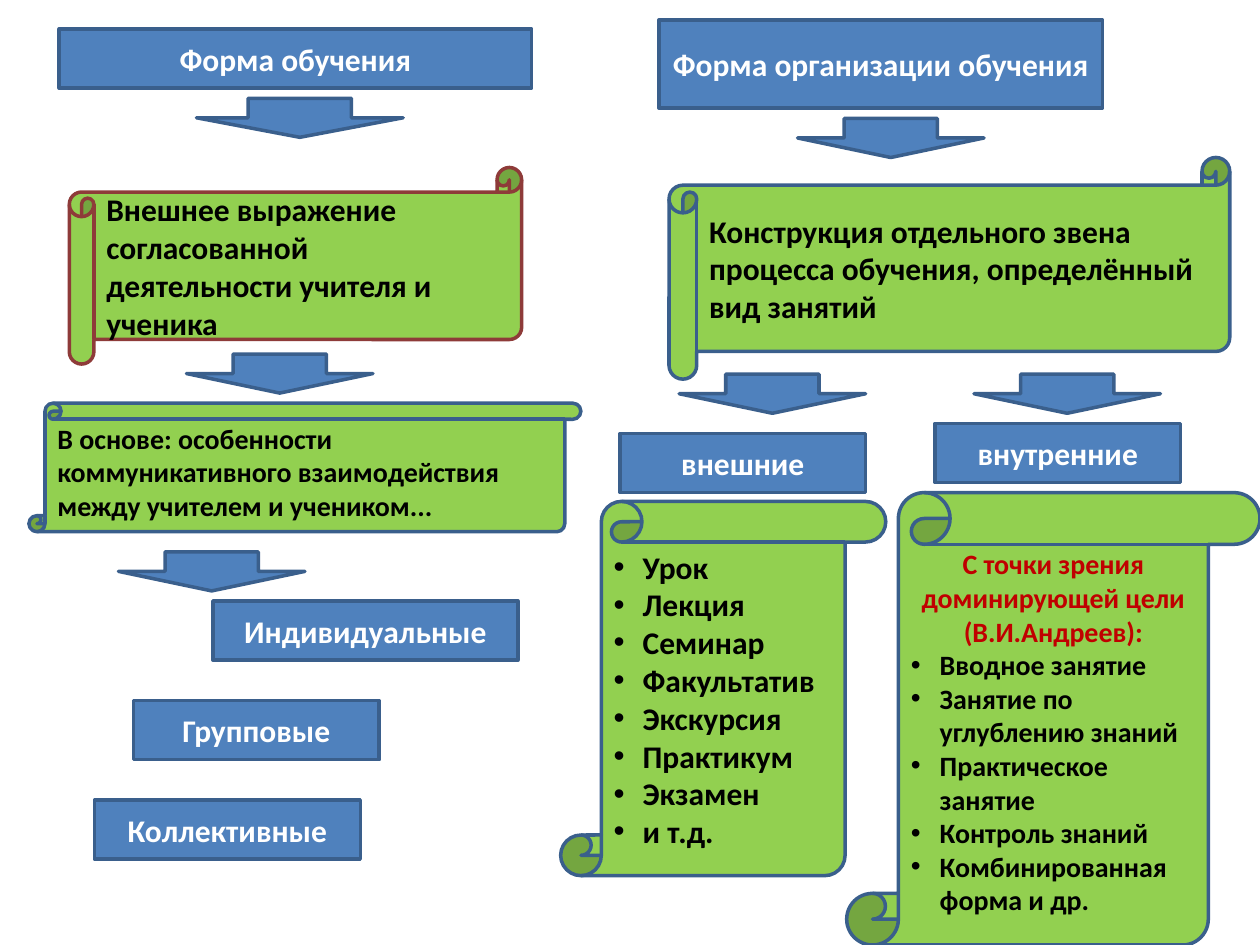
"""Build a slide comparing forms of teaching with forms of organising teaching."""
from dataclasses import dataclass

from lxml import etree
from pptx import Presentation
from pptx.dml.color import RGBColor
from pptx.enum.shapes import MSO_SHAPE
from pptx.enum.text import MSO_ANCHOR, PP_ALIGN
from pptx.oxml.ns import qn
from pptx.util import Inches, Pt

RECTANGLE = MSO_SHAPE.RECTANGLE
DOWN_ARROW = MSO_SHAPE.DOWN_ARROW
WIDE_SCROLL = MSO_SHAPE.HORIZONTAL_SCROLL
TALL_SCROLL = MSO_SHAPE.VERTICAL_SCROLL
LEFT, CENTER = PP_ALIGN.LEFT, PP_ALIGN.CENTER
MIDDLE = MSO_ANCHOR.MIDDLE


@dataclass(frozen=True)
class Theme:
    font: str = "Calibri"
    bullet_font: str = "Arial"
    blue: str = "4F81BD"
    green: str = "92D050"
    outline: str = "3A5F8C"
    red_outline: str = "8E3B39"
    label_text: str = "FFFFFF"
    scroll_text: str = "000000"
    accent_text: str = "C00000"
    large: int = 18
    small: int = 16
    line_width: int = 2
    bullet_indent: float = 0.23


THEME = Theme()


@dataclass(frozen=True)
class Label:
    text: str
    left: float
    top: float
    width: float = 1.95
    height: float = 0.47


@dataclass(frozen=True)
class Arrow:
    left: float
    top: float
    width: float = 1.48
    height: float = 0.31


@dataclass(frozen=True)
class Scroll:
    preset: MSO_SHAPE
    left: float
    top: float
    width: float
    height: float
    text: str = ""
    bullets: tuple[str, ...] = ()
    size: int = THEME.large
    outline: str = THEME.outline


LABELS = (
    Label("Форма обучения", 0.47, 0.23, 3.75),
    Label("Форма организации обучения", 5.23, 0.16, 3.52, 0.7),
    Label("внешние", 4.92, 3.44),
    Label("внутренние", 7.42, 3.36),
    Label("Индивидуальные", 1.69, 4.77, 2.42),
    Label("Групповые", 1.06, 5.56),
    Label("Коллективные", 0.75, 6.35, 2.11),
)

ARROWS = (
    Arrow(1.56, 0.78, 1.64),
    Arrow(6.33, 0.94),
    Arrow(7.73, 2.97),
    Arrow(5.39, 2.97),
    Arrow(1.48, 2.81),
    Arrow(0.94, 4.38),
)

SCROLLS = (
    Scroll(WIDE_SCROLL, 0.55, 1.33, 3.59, 1.56,
           "Внешнее выражение согласованной деятельности учителя и ученика",
           outline=THEME.red_outline),
    Scroll(WIDE_SCROLL, 5.31, 1.25, 4.45, 1.76,
           "Конструкция отдельного звена процесса обучения, определённый вид занятий"),
    Scroll(TALL_SCROLL, 4.45, 3.98, 2.58, 2.97,
           bullets=("Урок", "Лекция", "Семинар", "Факультатив", "Экскурсия",
                    "Практикум", "Экзамен", "и т.д.")),
    Scroll(TALL_SCROLL, 6.72, 3.91, 3.28, 3.59,
           "С точки зрения доминирующей цели (В.И.Андреев):",
           ("Вводное занятие", "Занятие по углублению знаний", "Практическое занятие",
            "Контроль знаний", "Комбинированная форма и др."),
           THEME.small),
    Scroll(TALL_SCROLL, 0.23, 3.2, 4.38, 1.02,
           "В основе: особенности коммуникативного взаимодействия между учителем и учеником...",
           size=THEME.small),
)


def draw_outline(slide, preset: MSO_SHAPE, part: Label | Arrow | Scroll,
                 fill: str, outline: str = THEME.outline):
    """Draw a filled preset shape and return it."""
    bounds = (part.left, part.top, part.width, part.height)
    shape = slide.shapes.add_shape(preset, *map(Inches, bounds))
    shape.shadow.inherit = False
    shape.fill.solid()
    shape.fill.fore_color.rgb = RGBColor.from_string(fill)
    shape.line.color.rgb = RGBColor.from_string(outline)
    shape.line.width = Pt(THEME.line_width)
    shape.text_frame.word_wrap = True
    shape.text_frame.vertical_anchor = MIDDLE
    return shape


def write(paragraph, text: str, size: int, color: str, alignment: PP_ALIGN) -> None:
    """Fill a paragraph with one bold run."""
    paragraph.alignment = alignment
    run = paragraph.add_run()
    run.text = text
    for attribute, value in {"name": THEME.font, "size": Pt(size), "bold": True}.items():
        setattr(run.font, attribute, value)
    run.font.color.rgb = RGBColor.from_string(color)


def add_bullet(paragraph) -> None:
    """Give a paragraph a hanging round bullet."""
    indent = Inches(THEME.bullet_indent)
    properties = paragraph._p.get_or_add_pPr()
    properties.set("marL", str(indent))
    properties.set("indent", str(-indent))
    etree.SubElement(properties, qn("a:buFont")).set("typeface", THEME.bullet_font)
    etree.SubElement(properties, qn("a:buChar")).set("char", "•")


def draw_label(slide, label: Label) -> None:
    """Draw a blue box with a centred caption."""
    box = draw_outline(slide, RECTANGLE, label, THEME.blue)
    write(box.text_frame.paragraphs[0], label.text, THEME.large, THEME.label_text, CENTER)


def draw_scroll(slide, scroll: Scroll) -> None:
    """Draw a green scroll with a statement, a bullet list or both."""
    frame = draw_outline(slide, scroll.preset, scroll, THEME.green, scroll.outline).text_frame
    is_heading = bool(scroll.text and scroll.bullets)
    lines = ((scroll.text,) if scroll.text else ()) + scroll.bullets
    first_bullet = len(lines) - len(scroll.bullets)
    for index, line in enumerate(lines):
        paragraph = frame.add_paragraph() if index else frame.paragraphs[0]
        heading = is_heading and index < first_bullet
        color = THEME.accent_text if heading else THEME.scroll_text
        write(paragraph, line, scroll.size, color, CENTER if heading else LEFT)
        if index >= first_bullet:
            add_bullet(paragraph)


def main() -> None:
    """Create the slide and save it."""
    presentation = Presentation()
    presentation.slide_width = Inches(10)
    presentation.slide_height = Inches(7.5)
    slide = presentation.slides.add_slide(presentation.slide_layouts[6])
    for arrow in ARROWS:
        draw_outline(slide, DOWN_ARROW, arrow, THEME.blue)
    for scroll in SCROLLS:
        draw_scroll(slide, scroll)
    for label in LABELS:
        draw_label(slide, label)
    presentation.save("out.pptx")


if __name__ == "__main__":
    main()
